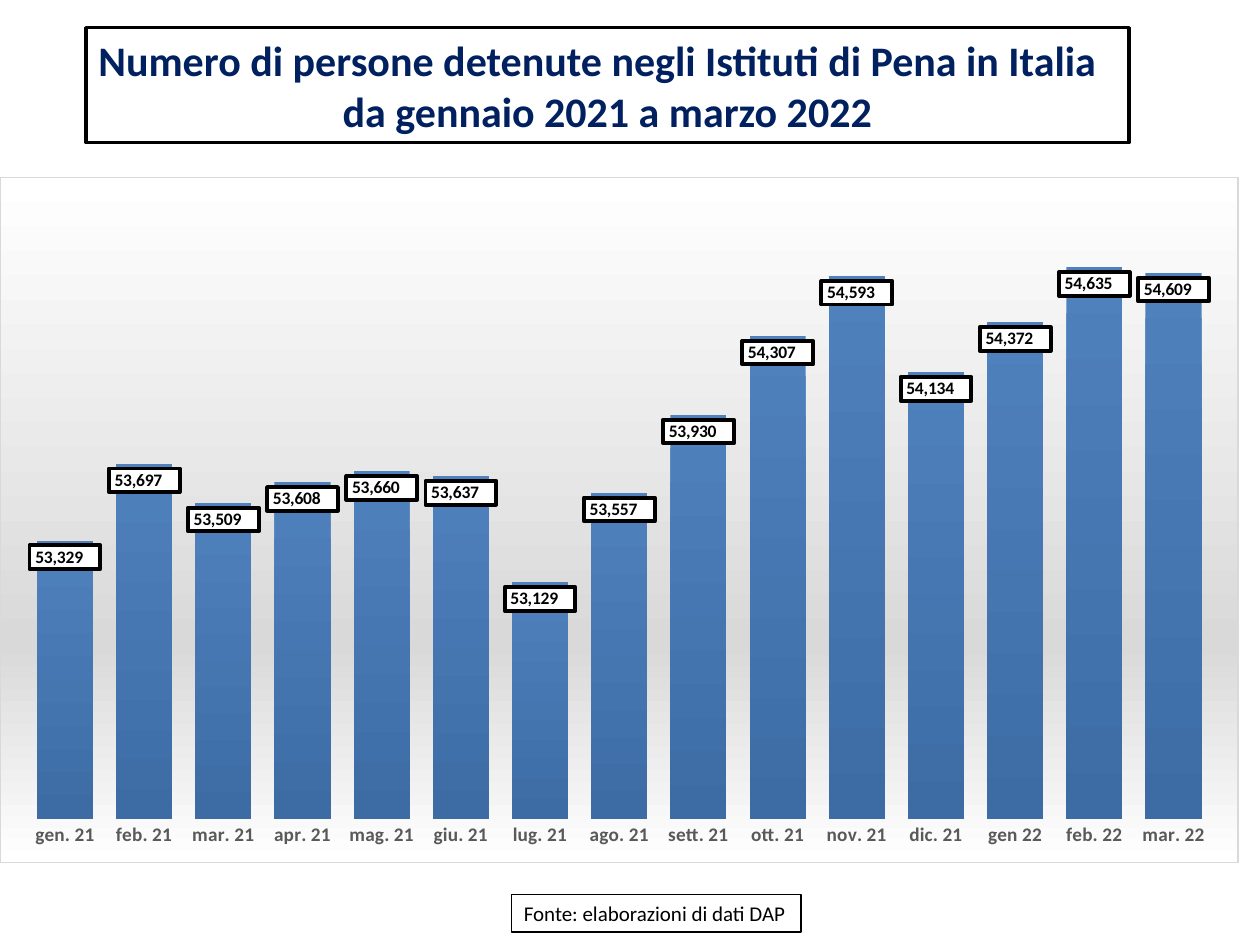
from dataclasses import dataclass

from lxml import etree
from pptx import Presentation
from pptx import util as u
from pptx.chart.data import CategoryChartData
from pptx.dml.color import RGBColor
from pptx.enum import chart as ch, text
from pptx.oxml import parse_xml
from pptx.oxml.ns import nsdecls, qn


@dataclass(frozen=True)
class Theme:
    font: str = "Calibri"
    navy: str = "002060"
    black: str = "000000"
    white: str = "FFFFFF"
    gray: str = "D9D9D9"
    label: str = "595959"
    blue: str = "4F81BD"
    deep: str = "3D6CA4"
    head: int = 24
    note: int = 12
    axis: int = 11
    value: int = 10


T = Theme()
FORMAT = r'_-* #,##0\ _€_-;\-* #,##0\ _€_-;_-* "-"?'
MONTHS = ["gen. 21", "feb. 21", "mar. 21", "apr. 21", "mag. 21", "giu. 21",
          "lug. 21", "ago. 21", "sett. 21", "ott. 21", "nov. 21", "dic. 21",
          "gen 22", "feb. 22", "mar. 22"]
COUNTS = [53329, 53697, 53509, 53608, 53660, 53637, 53129, 53557, 53930,
          54307, 54593, 54134, 54372, 54635, 54609]


def style(font, size, color, bold=False):
    font.name, font.size, font.bold = T.font, u.Pt(size), bold
    font.color.rgb = RGBColor.from_string(color)


def frame(box, lines, size, color, width, bold=False):
    """Fill a white, outlined box with lines of text."""
    box.fill.solid()
    box.fill.fore_color.rgb = RGBColor.from_string(T.white)
    box.line.color.rgb = RGBColor.from_string(T.black)
    box.line.width = u.Pt(width)
    body = box.text_frame
    body.text = "\n".join(lines)
    body.word_wrap = True
    body.auto_size = text.MSO_AUTO_SIZE.SHAPE_TO_FIT_TEXT
    for para in body.paragraphs:
        para.alignment = text.PP_ALIGN.LEFT
        for run in para.runs:
            style(run.font, size, color, bold)


def solid(color):
    return f'<a:solidFill><a:srgbClr val="{color}"/></a:solidFill>'


def grad(*stops):
    """Return a top-to-bottom gradient from (percent, colour) pairs."""
    marks = "".join(f'<a:gs pos="{pos * 1000}"><a:srgbClr val="{color}"/></a:gs>'
                    for pos, color in stops)
    return (f'<a:gradFill><a:gsLst>{marks}</a:gsLst>'
            '<a:lin ang="5400000" scaled="0"/></a:gradFill>')


def look(fill, line, width):
    """Return chart shape properties with a fill and an outline."""
    return parse_xml(f'<c:spPr {nsdecls("c", "a")}>{fill}'
                     f'<a:ln w="{u.Pt(width)}">{solid(line)}</a:ln></c:spPr>')


def place(chart, **parts):
    """Fix the inner plot area as fractions of the chart."""
    area = chart.plots[0]._element.getparent()
    for old in area.findall(qn("c:layout")):
        area.remove(old)
    layout = parse_xml(f'<c:layout {nsdecls("c")}><c:manualLayout>'
                       '<c:layoutTarget val="inner"/><c:xMode val="edge"/>'
                       '<c:yMode val="edge"/></c:manualLayout></c:layout>')
    for key, val in parts.items():
        etree.SubElement(layout[0], qn(f"c:{key}")).set("val", str(val))
    area.insert(0, layout)


def columns(slide):
    data = CategoryChartData()
    data.categories = MONTHS
    data.add_series("Series 1", COUNTS)
    chart = slide.shapes.add_chart(
        ch.XL_CHART_TYPE.COLUMN_CLUSTERED, u.Cm(0), u.Cm(3.56),
        u.Cm(24.97), u.Cm(13.84), data).chart
    chart.has_title = chart.has_legend = False
    style(chart.font, T.value, T.black)
    back = grad((0, T.white), (68, T.gray), (100, T.white))
    chart._chartSpace.find(qn("c:chart")).addnext(look(back, T.gray, 0.75))
    place(chart, x=0.02, y=0.02, w=0.96, h=0.916)

    axis = chart.category_axis
    axis.major_tick_mark = ch.XL_TICK_MARK.NONE
    axis.format.line.fill.background()
    style(axis.tick_labels.font, T.axis, T.label, True)
    scale = chart.value_axis
    scale.visible = scale.has_major_gridlines = False
    scale.minimum_scale, scale.maximum_scale = 52000, 55000

    plot = chart.plots[0]
    plot.gap_width, plot.vary_by_categories = 41, False
    fill = plot.series[0].format.fill
    fill.gradient()
    fill.gradient_angle = 270
    for stop, pos, color in zip(fill.gradient_stops, (0, 1), (T.blue, T.deep)):
        stop.position = pos
        stop.color.rgb = RGBColor.from_string(color)

    labels = plot.series[0].data_labels
    labels.show_value = True
    labels.position = ch.XL_LABEL_POSITION.INSIDE_END
    labels.number_format, labels.number_format_is_linked = FORMAT, False
    style(labels.font, T.value, T.black, True)
    labels._element.find(qn("c:numFmt")).addnext(
        look(solid(T.white), T.black, 2.25))


def main():
    deck = Presentation()
    deck.slide_width, deck.slide_height = u.Cm(25.4), u.Cm(19.05)
    slide = deck.slides.add_slide(deck.slide_layouts[5])

    title = slide.shapes.title
    title.left, title.top = u.Cm(1.73), u.Cm(0.56)
    title.width, title.height = u.Cm(21.03), u.Cm(2.31)
    frame(title, ["Numero di persone detenute negli Istituti di Pena in Italia",
                  "da gennaio 2021 a marzo 2022"], T.head, T.navy, 2, True)
    title.text_frame.paragraphs[1].alignment = text.PP_ALIGN.CENTER

    note = slide.shapes.add_textbox(u.Cm(10.31), u.Cm(18.03),
                                    u.Cm(5.84), u.Cm(0.76))
    frame(note, ["Fonte: elaborazioni di dati DAP"], T.note, T.black, 0.75)
    columns(slide)
    deck.save("out.pptx")


if __name__ == "__main__":
    main()
